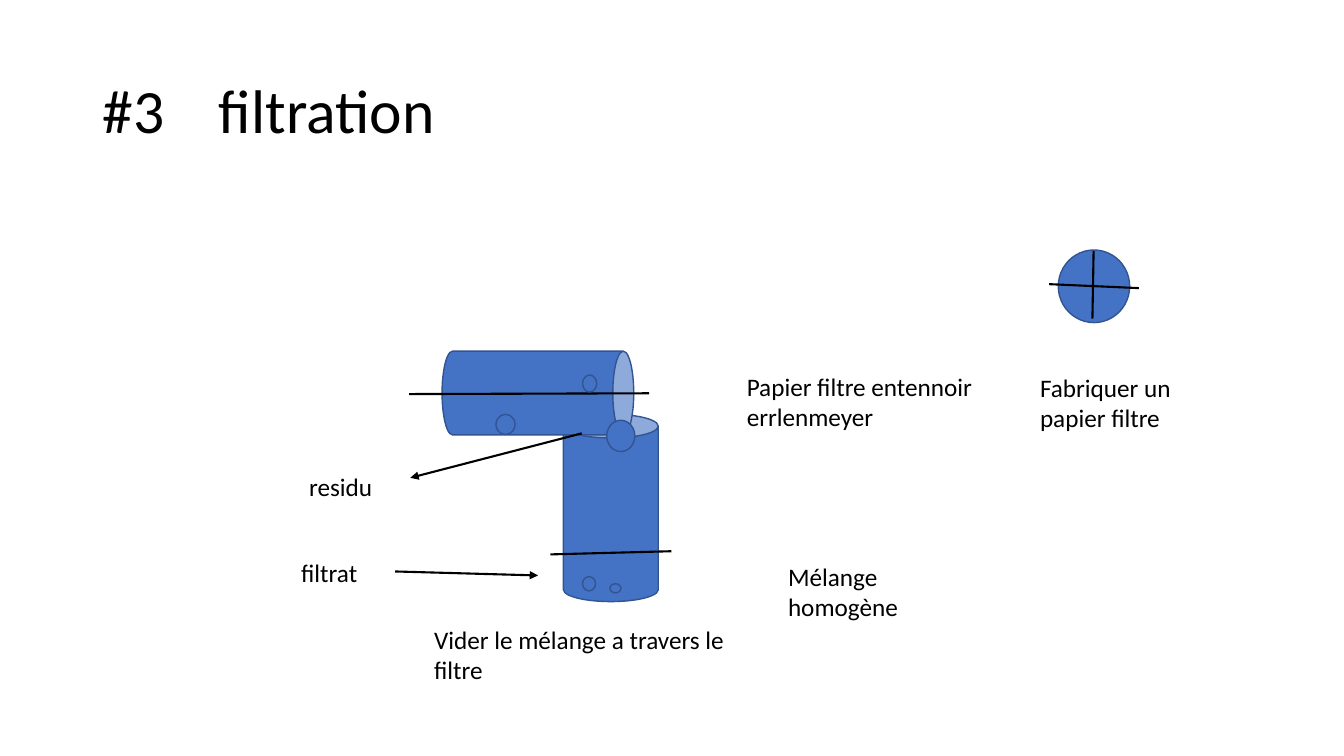
from dataclasses import dataclass

from lxml import etree
from pptx import Presentation
from pptx.dml.color import RGBColor
from pptx.enum.shapes import MSO_CONNECTOR, MSO_SHAPE
from pptx.enum.text import MSO_ANCHOR, MSO_AUTO_SIZE, PP_ALIGN
from pptx.oxml.ns import qn
from pptx.util import Cm, Pt

CAN, OVAL = MSO_SHAPE.CAN, MSO_SHAPE.OVAL
STRAIGHT = MSO_CONNECTOR.STRAIGHT
LEFT, MIDDLE = PP_ALIGN.LEFT, MSO_ANCHOR.MIDDLE
NO_FIT, GROW = MSO_AUTO_SIZE.NONE, MSO_AUTO_SIZE.SHAPE_TO_FIT_TEXT
TITLE_ONLY = 5


@dataclass(frozen=True)
class Theme:
    font: str = "Calibri"
    ink: RGBColor = RGBColor(0x00, 0x00, 0x00)
    fill: RGBColor = RGBColor(0x44, 0x72, 0xC4)
    outline: RGBColor = RGBColor(0x32, 0x54, 0x91)
    title_size: int = 44
    label_size: int = 18
    outline_width: float = 1
    stroke_width: float = 1.5


THEME = Theme()

# All lengths are in centimetres.
SLIDE_SIZE = (33.87, 19.05)
TITLE = "#3\tfiltration"
TITLE_BOX = (2.34, 1.02, 29.21, 3.68)
TITLE_TAB = 2.92

# left, top, width, height, rotation
VESSELS = [
    (14.2, 10.44, 2.39, 4.72, 0),
    (12.5, 7.49, 2.11, 4.83, 90),
]
FILTER_PAPER = (26.67, 6.3, 1.8, 1.83)
PARTICLES = [
    (14.68, 9.45, 0.36, 0.43),
    (12.5, 10.44, 0.48, 0.51),
    (15.29, 10.59, 0.71, 0.79),
    (14.68, 14.53, 0.33, 0.36),
    (15.37, 14.71, 0.28, 0.23),
]

# from x, from y, to x, to y
ARROWS = [
    (14.66, 10.92, 10.34, 12.04),
    (9.96, 14.4, 13.56, 14.5),
]
LIQUID_LEVELS = [
    (13.87, 13.97, 16.92, 13.89),
    (10.31, 9.93, 16.36, 9.91),
]
PAPER_FOLDS = [
    (26.44, 7.16, 28.7, 7.26),
    (27.56, 6.32, 27.53, 8.03),
]

# paragraphs, left, top, width, height
LABELS = [
    (["residu"], 7.54, 11.76, 2.44, 1.02),
    (["filtrat"], 7.34, 13.92, 2.21, 1.02),
    (["Vider le mélange a travers le filtre"], 10.69, 15.6, 7.95, 1.8),
    (["Mélange homogène"], 19.61, 14.02, 5.26, 1.8),
    (["Papier filtre entennoir", "errlenmeyer"], 18.57, 9.22, 6.83, 1.8),
    (["Fabriquer un papier filtre"], 25.96, 9.25, 5.46, 1.8),
]


def cm(values):
    return [Cm(v) for v in values]


def apply(target, formats):
    for name, value in formats.items():
        setattr(target, name, value)


def write(p, text, size):
    r = p.add_run()
    r.text = text
    apply(r.font, {"name": THEME.font, "size": Pt(size)})
    r.font.color.rgb = THEME.ink


def add_title(s):
    title = s.shapes.title
    apply(title, dict(zip(("left", "top", "width", "height"), cm(TITLE_BOX))))
    tf = title.text_frame
    apply(tf, {"vertical_anchor": MIDDLE, "auto_size": NO_FIT, "word_wrap": True})
    p = tf.paragraphs[0]
    apply(p, {"alignment": LEFT, "line_spacing": 0.9})
    tabs = etree.SubElement(p._p.get_or_add_pPr(), qn("a:tabLst"))
    etree.SubElement(tabs, qn("a:tab"), pos=str(Cm(TITLE_TAB)), algn="l")
    write(p, TITLE, THEME.title_size)


def add_solid(s, kind, box, rotation=0):
    sp = s.shapes.add_shape(kind, *cm(box))
    sp.rotation = rotation
    sp.shadow.inherit = False
    sp.fill.solid()
    sp.fill.fore_color.rgb = THEME.fill
    sp.line.color.rgb = THEME.outline
    sp.line.width = Pt(THEME.outline_width)


def add_line(s, ends, arrow=False):
    line = s.shapes.add_connector(STRAIGHT, *cm(ends))
    line.line.color.rgb = THEME.ink
    line.line.width = Pt(THEME.stroke_width)
    if arrow:
        etree.SubElement(line.line._get_or_add_ln(), qn("a:tailEnd"), type="triangle")
    etree.SubElement(line._element.spPr, qn("a:effectLst"))


def add_label(s, paragraphs, box):
    tf = s.shapes.add_textbox(*cm(box)).text_frame
    apply(tf, {"word_wrap": True, "auto_size": GROW})
    for i, text in enumerate(paragraphs):
        p = tf.add_paragraph() if i else tf.paragraphs[0]
        write(p, text, THEME.label_size)


def main():
    prs = Presentation()
    prs.slide_width, prs.slide_height = cm(SLIDE_SIZE)
    s = prs.slides.add_slide(prs.slide_layouts[TITLE_ONLY])
    add_title(s)
    for *box, rotation in VESSELS:
        add_solid(s, CAN, box, rotation)
    for ends in ARROWS:
        add_line(s, ends, arrow=True)
    for ends in LIQUID_LEVELS:
        add_line(s, ends)
    for paragraphs, *box in LABELS:
        add_label(s, paragraphs, box)
    add_solid(s, OVAL, FILTER_PAPER)
    for ends in PAPER_FOLDS:
        add_line(s, ends)
    for box in PARTICLES:
        add_solid(s, OVAL, box)
    prs.save("out.pptx")


if __name__ == "__main__":
    main()
